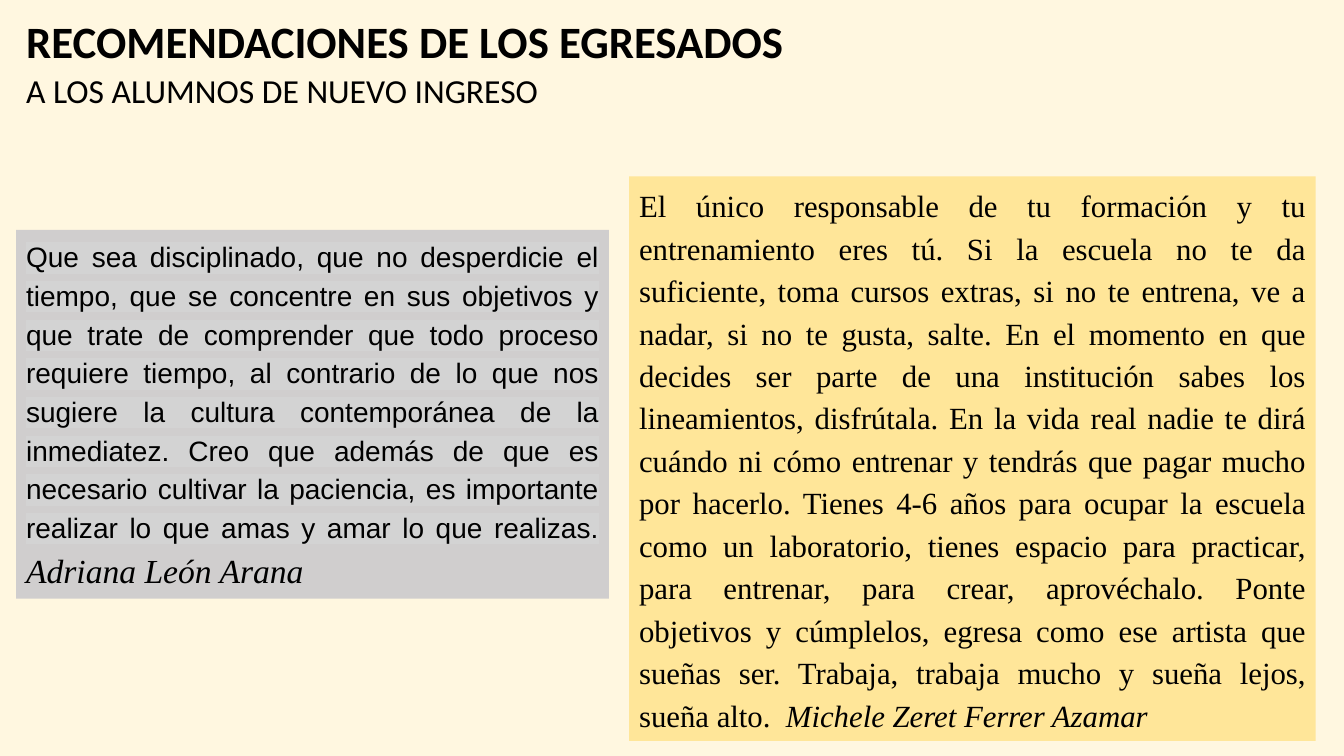
from lxml.etree import SubElement
from pptx import Presentation
from pptx.dml.color import RGBColor as Rgb
from pptx.enum.shapes import MSO_SHAPE as Shape
from pptx.enum.text import MSO_ANCHOR as Anchor, MSO_AUTO_SIZE as AutoSize, PP_ALIGN as Align
from pptx.oxml.ns import qn
from pptx.util import Inches, Pt

COLORS = {
    "background": "FFF7E0",
    "text": "000000",
    "gray": "D0CECE",
    "highlight": "D3D3D3",
    "yellow": "FFE699",
}

DISCIPLINE = (
    "Que sea disciplinado, que no desperdicie el tiempo, que se concentre en sus objetivos "
    "y que trate de comprender que todo proceso requiere tiempo, al contrario de lo que nos "
    "sugiere la cultura contemporánea de la inmediatez. Creo que además de que es necesario "
    "cultivar la paciencia, es importante realizar lo que amas y amar lo que realizas. "
)
RESPONSIBILITY = (
    "El único responsable de tu formación y tu entrenamiento eres tú. Si la escuela no te da "
    "suficiente, toma cursos extras, si no te entrena, ve a nadar, si no te gusta, salte. En el "
    "momento en que decides ser parte de una institución sabes los lineamientos, disfrútala. En "
    "la vida real nadie te dirá cuándo ni cómo entrenar y tendrás que pagar mucho por hacerlo. "
    "Tienes 4-6 años para ocupar la escuela como un laboratorio, tienes espacio para practicar, "
    "para entrenar, para crear, aprovéchalo. Ponte objetivos y cúmplelos, egresa como ese artista "
    "que sueñas ser. Trabaja, trabaja mucho y sueña lejos, sueña alto.  "
)


class AdviceSlide:
    heading_font = "Calibri"
    author_font = "Times New Roman"

    def __init__(self, deck):
        self.slide = deck.slides.add_slide(deck.slide_layouts[5])
        fill = self.slide.background.fill
        fill.solid()
        fill.fore_color.rgb = self.color("background")

    def color(self, key):
        return Rgb.from_string(COLORS[key])

    def style(self, font, name, size, bold=None, italic=None):
        font.name, font.size = name, Pt(size)
        font.bold, font.italic = bold, italic
        font.color.rgb = self.color("text")

    def fit(self, frame):
        frame.word_wrap = True
        frame.vertical_anchor = Anchor.TOP
        frame.auto_size = AutoSize.SHAPE_TO_FIT_TEXT

    def heading(self, holder, text, size, bold):
        frame = holder.text_frame
        frame.text = text
        self.fit(frame)
        line = frame.paragraphs[0]
        line.alignment = Align.LEFT
        self.style(line.font, self.heading_font, size, bold)

    def title(self, text, left, top, width, height):
        holder = self.slide.shapes.title
        holder.left, holder.top = Inches(left), Inches(top)
        holder.width, holder.height = Inches(width), Inches(height)
        self.heading(holder, text, 32, True)

    def subtitle(self, text, *box):
        holder = self.slide.shapes.add_textbox(*map(Inches, box))
        self.heading(holder, text, 24, False)

    def highlight(self, run):
        fill = run.font._element.find(qn("a:solidFill"))
        marker = fill.makeelement(qn("a:highlight"))
        SubElement(marker, qn("a:srgbClr"), val=COLORS["highlight"])
        fill.addnext(marker)

    def quote(self, text, author, box, fill, font, size, author_size, marked=False):
        card = self.slide.shapes.add_shape(Shape.RECTANGLE, *map(Inches, box))
        card.shadow.inherit = False
        card.fill.solid()
        card.fill.fore_color.rgb = self.color(fill)
        card.line.fill.background()
        self.fit(card.text_frame)
        paragraph = card.text_frame.paragraphs[0]
        paragraph.alignment = Align.JUSTIFY
        paragraph.line_spacing = 1.15
        paragraph.space_after = Pt(10)
        advice, signature = paragraph.add_run(), paragraph.add_run()
        advice.text, signature.text = text, author
        self.style(advice.font, font, size)
        self.style(signature.font, self.author_font, author_size, italic=True)
        if marked:
            self.highlight(advice)


def main():
    deck = Presentation()
    deck.slide_width, deck.slide_height = Inches(13.33), Inches(7.5)
    page = AdviceSlide(deck)
    page.title("RECOMENDACIONES DE LOS EGRESADOS", 0.16, 0.09, 8.71, 0.64)
    page.subtitle("A LOS ALUMNOS DE NUEVO INGRESO", 0.16, 0.64, 5.32, 0.5)
    page.quote(DISCIPLINE, "Adriana León Arana", (0.16, 2.28, 5.88, 3.66),
               "gray", "Arial", 20, 24, marked=True)
    page.quote(RESPONSIBILITY, "Michele Zeret Ferrer Azamar", (6.24, 1.75, 6.81, 5.6),
               "yellow", "Times New Roman", 22, 22)
    deck.save("out.pptx")


if __name__ == "__main__":
    main()
